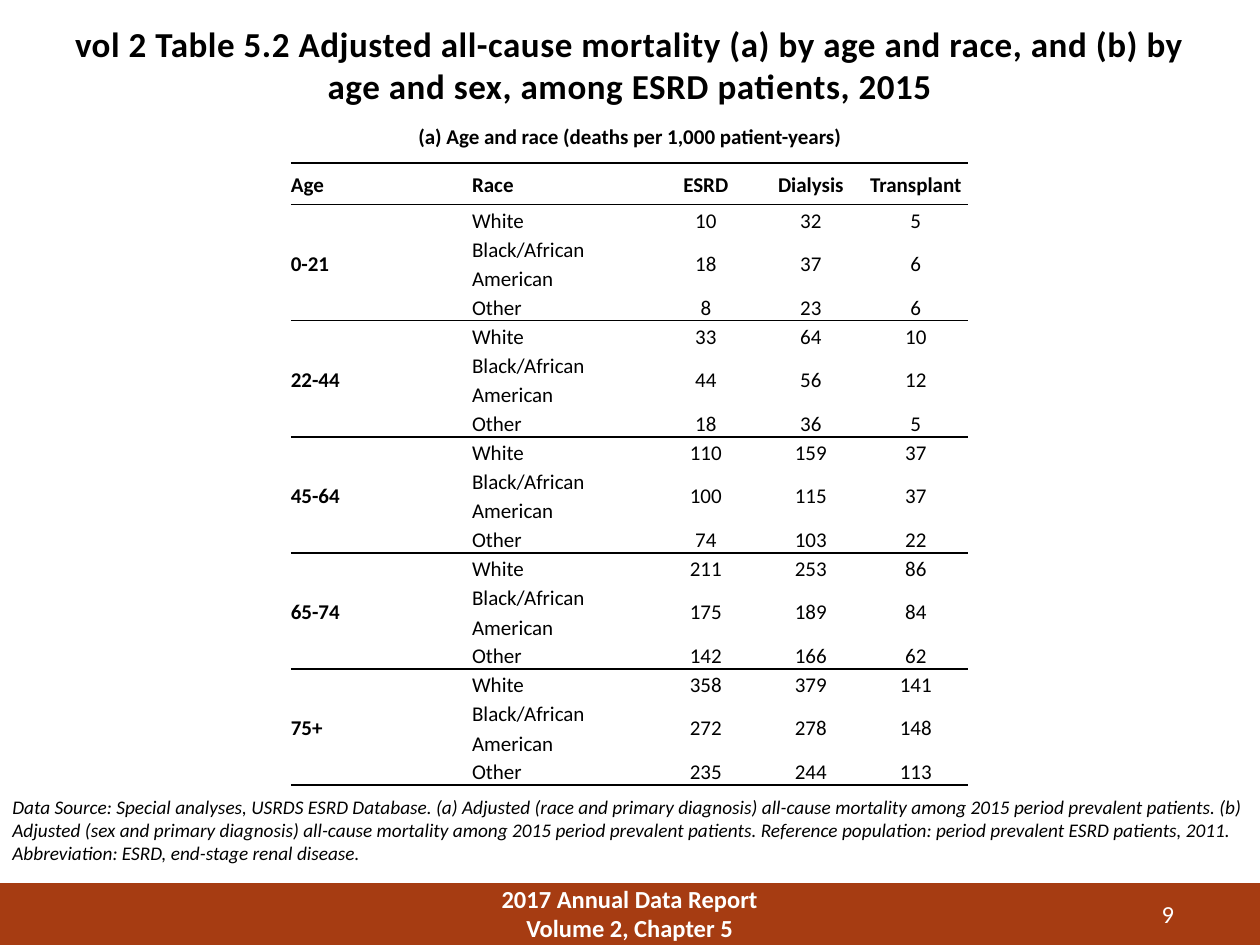
"""Build a slide with a table of adjusted mortality by age and race."""
from lxml import etree
from pptx import Presentation
from pptx.dml.color import RGBColor
from pptx.enum.shapes import MSO_SHAPE
from pptx.enum.text import MSO_ANCHOR, PP_ALIGN
from pptx.oxml.ns import qn
from pptx.util import Pt

LEFT, MID, RIGHT = PP_ALIGN.LEFT, PP_ALIGN.CENTER, PP_ALIGN.RIGHT
TOP, CENTRE = MSO_ANCHOR.TOP, MSO_ANCHOR.MIDDLE
RECT = MSO_SHAPE.RECTANGLE
BLACK = RGBColor(0, 0, 0)
WHITE = RGBColor(255, 255, 255)
RUST = RGBColor(0xA6, 0x3C, 0x12)
FONT = "Calibri"
PLAIN = "{2D5ABB26-0587-4C30-8999-92F81FD0307C}"

TITLE = ("vol 2 Table 5.2 Adjusted all-cause mortality (a) by age and race, "
         "and (b) by age and sex, among ESRD patients, 2015")
HEAD = "(a) Age and race (deaths per 1,000 patient-years)"
NOTE = ("Data Source: Special analyses, USRDS ESRD Database. (a) Adjusted (race "
        "and primary diagnosis) all-cause mortality among 2015 period prevalent "
        "patients. (b) Adjusted (sex and primary diagnosis) all-cause mortality "
        "among 2015 period prevalent patients. Reference population: period "
        "prevalent ESRD patients, 2011. Abbreviation: ESRD, end-stage renal "
        "disease.")
FOOT = ["2017 Annual Data Report", "Volume 2, Chapter 5"]
COLS = ["Age", "Race", "ESRD", "Dialysis", "Transplant"]
WIDTHS = [103.6, 103.6, 60, 60, 60]
RACES = ["White", "Black/African American", "Other"]
RATES = {
    "0-21": [(10, 32, 5), (18, 37, 6), (8, 23, 6)],
    "22-44": [(33, 64, 10), (44, 56, 12), (18, 36, 5)],
    "45-64": [(110, 159, 37), (100, 115, 37), (74, 103, 22)],
    "65-74": [(211, 253, 86), (175, 189, 84), (142, 166, 62)],
    "75+": [(358, 379, 141), (272, 278, 148), (235, 244, 113)],
}


def write(para, text, size, color=BLACK, bold=False, italic=False, align=LEFT):
    para.alignment = align
    run = para.add_run()
    run.text = text
    font = run.font
    font.name, font.size = FONT, Pt(size)
    font.bold, font.italic = bold, italic
    font.color.rgb = color
    return run


def add_text(slide, box, lines, size, anchor=TOP, wrap=True, **style):
    frame = slide.shapes.add_textbox(*map(Pt, box)).text_frame
    frame.word_wrap = wrap
    frame.vertical_anchor = anchor
    for i, line in enumerate(lines):
        para = frame.add_paragraph() if i else frame.paragraphs[0]
        run = write(para, line, size, **style)
    return run


def rule(cell, sides):
    props = cell._tc.get_or_add_tcPr()
    for i, side in enumerate(sides):
        line = etree.Element(qn("a:ln" + side), w=str(Pt(1)))
        fill = etree.SubElement(line, qn("a:solidFill"))
        etree.SubElement(fill, qn("a:srgbClr"), val=str(BLACK))
        props.insert(i, line)


def add_rates(slide):
    rows = [COLS]
    for age, group in RATES.items():
        for i, (race, rates) in enumerate(zip(RACES, group)):
            rows.append(["" if i else age, race, *rates])
    shape = slide.shapes.add_table(
        len(rows), len(COLS), Pt(166.2), Pt(93), Pt(sum(WIDTHS)), Pt(355))
    table = shape.table
    table.first_row = table.horz_banding = False
    table._tbl.tblPr.find(qn("a:tableStyleId")).text = PLAIN
    for col, width in zip(table.columns, WIDTHS):
        col.width = Pt(width)
    for r, row in enumerate(rows):
        table.rows[r].height = Pt(14.4 if r else 24)
        for c, value in enumerate(row):
            cell = table.cell(r, c)
            cell.margin_left = cell.margin_right = 0
            cell.margin_top = cell.margin_bottom = 0
            cell.vertical_anchor = CENTRE
            cell.fill.background()
            if r == 0:
                rule(cell, "TB")
            elif c == 0 and value:
                cell.merge(table.cell(r + len(RACES) - 1, c))
                rule(cell, "TB")
            elif r % len(RACES) == 0:
                rule(cell, "B")
            if value != "":
                para = cell.text_frame.paragraphs[0]
                para.line_spacing = 1.15
                write(para, str(value), 12, bold=r == 0 or c == 0,
                      align=MID if c > 1 else LEFT)
    shape.height = Pt(355)


def main():
    deck = Presentation()
    deck.slide_width, deck.slide_height = Pt(720), Pt(540)
    slide = deck.slides.add_slide(deck.slide_layouts[6])
    band = slide.shapes.add_shape(RECT, 0, Pt(504.6), Pt(720), Pt(35.4))
    band.shadow.inherit = False
    band.fill.solid()
    band.fill.fore_color.rgb = RUST
    band.line.fill.background()
    add_text(slide, (257.8, 501.4, 204, 24), FOOT, 14,
             color=WHITE, bold=True, align=MID)
    add_text(slide, (606, 510, 72, 22), ["9"], 14, color=WHITE, align=RIGHT)
    title = add_text(slide, (28.5, 7.2, 663, 59), [TITLE], 20,
                     anchor=CENTRE, bold=True, align=MID)
    title.font._element.set("spc", "30")
    add_rates(slide)
    add_text(slide, (0, 451, 720, 47.5), [NOTE], 11, italic=True)
    add_text(slide, (229.7, 67, 260.6, 21.6), [HEAD], 12,
             wrap=False, bold=True, align=MID)
    deck.save("out.pptx")


if __name__ == "__main__":
    main()
